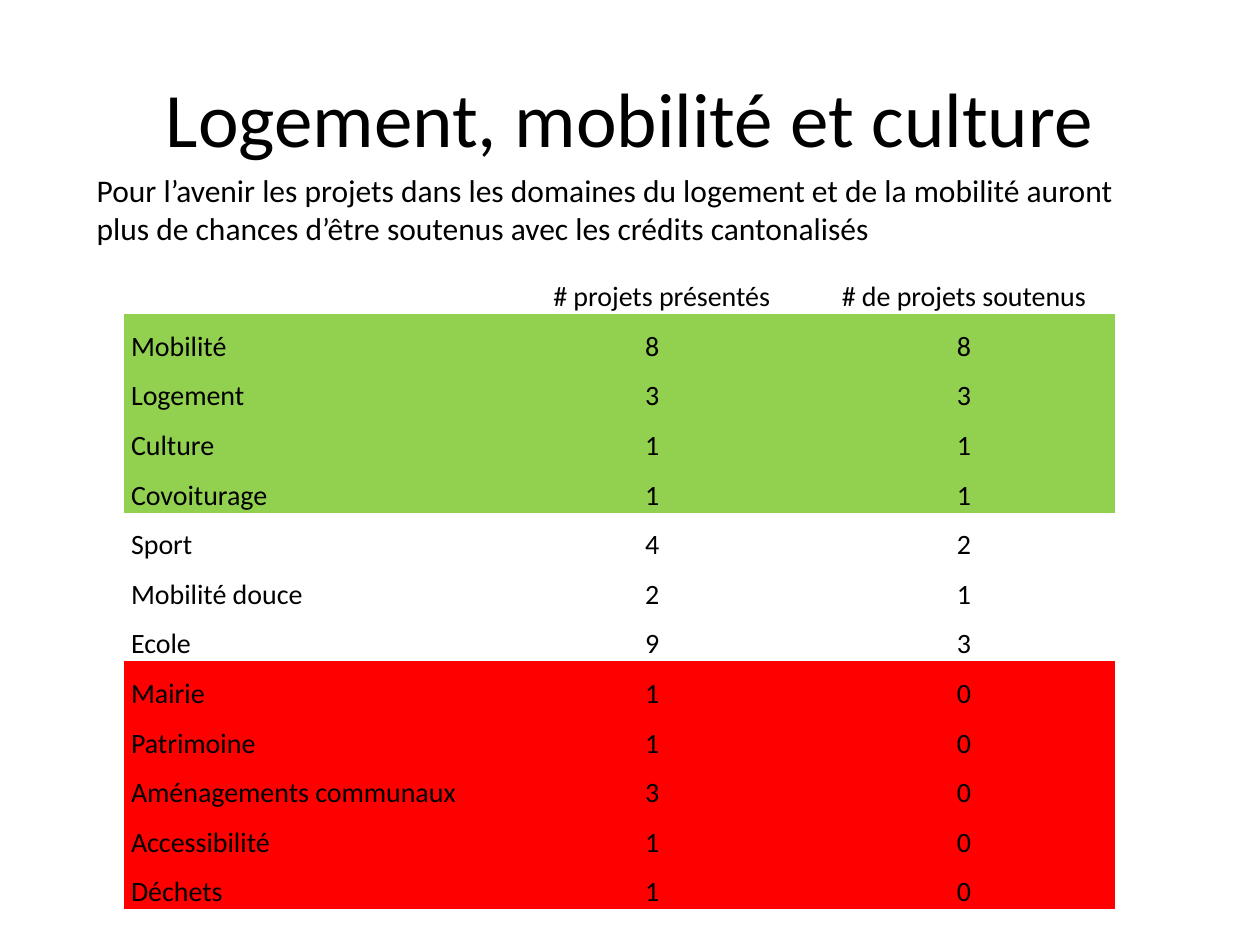
from typing import NamedTuple

from pptx import Presentation
from pptx.dml.color import RGBColor
from pptx.enum.text import MSO_ANCHOR, PP_ALIGN
from pptx.util import Pt

LEFT, CENTER = PP_ALIGN.LEFT, PP_ALIGN.CENTER
TOP, MIDDLE, BOTTOM = MSO_ANCHOR.TOP, MSO_ANCHOR.MIDDLE, MSO_ANCHOR.BOTTOM

FONT = "Calibri"
BLACK, GREEN, RED = "000000", "92D050", "FF0000"
PLAIN = "{2D5ABB26-0587-4C30-8999-92F81FD0307C}"  # table style without grid
WIDTHS = (221.2, 172.7, 172.7)
HEIGHT = 28.36
EDGE = 0.7


class Box(NamedTuple):
    x: float
    y: float
    w: float
    h: float


class Topic(NamedTuple):
    name: str
    shown: int
    backed: int
    fill: str = ""


HEADS = ("", "# projets présentés", "# de projets soutenus")
TOPICS = (
    Topic("Mobilité", 8, 8, GREEN),
    Topic("Logement", 3, 3, GREEN),
    Topic("Culture", 1, 1, GREEN),
    Topic("Covoiturage", 1, 1, GREEN),
    Topic("Sport", 4, 2),
    Topic("Mobilité douce", 2, 1),
    Topic("Ecole", 9, 3),
    Topic("Mairie", 1, 0, RED),
    Topic("Patrimoine", 1, 0, RED),
    Topic("Aménagements communaux", 3, 0, RED),
    Topic("Accessibilité", 1, 0, RED),
    Topic("Déchets", 1, 0, RED),
)


def color(code: str) -> RGBColor:
    return RGBColor.from_string(code)


def write(frame, text: str, size: float, align) -> None:
    line = frame.paragraphs[0]
    line.alignment = align
    run = line.add_run()
    run.text = text
    run.font.name = FONT
    run.font.size = Pt(size)
    run.font.color.rgb = color(BLACK)


def add_text(slide, box: Box, text: str, size: float, align, anchor) -> None:
    frame = slide.shapes.add_textbox(*map(Pt, box)).text_frame
    frame.word_wrap = True
    frame.vertical_anchor = anchor
    write(frame, text, size, align)


def fill_cell(cell, text: str, fill: str, align, left: float, right: float) -> None:
    cell.margin_left, cell.margin_right = Pt(left), Pt(right)
    cell.margin_top, cell.margin_bottom = Pt(EDGE), Pt(0)
    cell.vertical_anchor = BOTTOM
    if fill:
        cell.fill.solid()
        cell.fill.fore_color.rgb = color(fill)
    else:
        cell.fill.background()
    if text:
        write(cell.text_frame, text, 16, align)


def add_grid(slide, x: float, y: float) -> None:
    count = len(TOPICS) + 1
    box = Box(x, y, sum(WIDTHS), HEIGHT * count)
    table = slide.shapes.add_table(count, len(WIDTHS), *map(Pt, box)).table
    table.first_row = table.horz_banding = False
    table._tbl.tblPr[0].text = PLAIN
    for col, width in zip(table.columns, WIDTHS):
        col.width = Pt(width)
    for row in table.rows:
        row.height = Pt(HEIGHT)

    for c, head in enumerate(HEADS):
        fill_cell(table.cell(0, c), head, "", CENTER, EDGE, EDGE)
    for r, topic in enumerate(TOPICS, 1):
        name, shown, backed = (table.cell(r, c) for c in range(3))
        fill_cell(name, topic.name, topic.fill, LEFT, 4.3, EDGE)
        fill_cell(shown, str(topic.shown), topic.fill, CENTER, EDGE, 11.5)
        fill_cell(backed, str(topic.backed), topic.fill, CENTER, EDGE, EDGE)


def main() -> None:
    deck = Presentation()
    deck.slide_width, deck.slide_height = Pt(720), Pt(540)
    slide = deck.slides.add_slide(deck.slide_layouts[6])
    add_text(slide, Box(36, 21.6, 648, 90), "Logement, mobilité et culture",
             44, CENTER, MIDDLE)
    add_text(slide, Box(48.2, 94.3, 617.8, 51.1),
             "Pour l’avenir les projets dans les domaines du logement et de la "
             "mobilité auront plus de chances d’être soutenus avec les crédits "
             "cantonalisés", 18, LEFT, TOP)
    add_grid(slide, 70.6, 151.2)
    deck.save("out.pptx")


if __name__ == "__main__":
    main()
